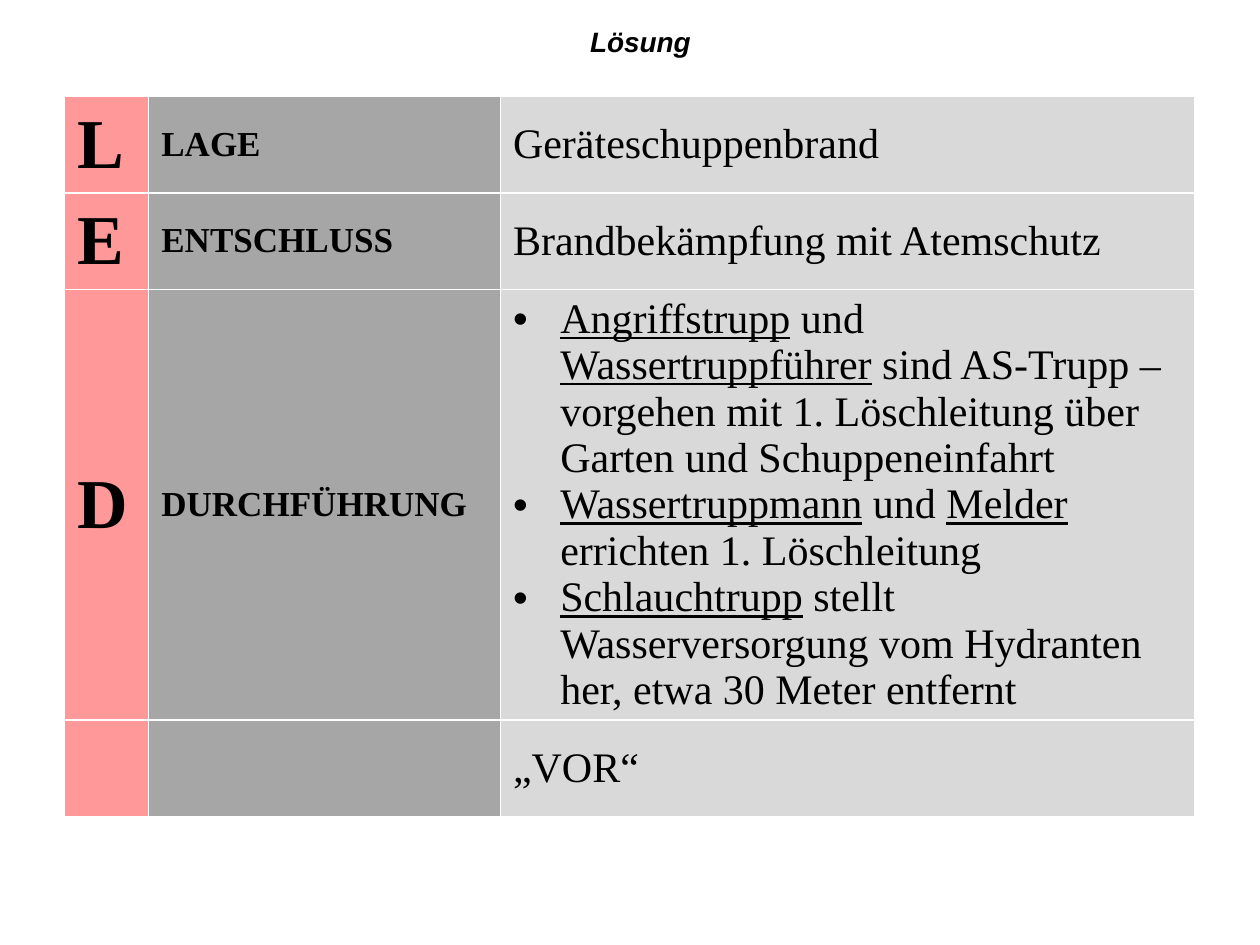
from typing import NamedTuple

from lxml.etree import SubElement
from pptx import Presentation
from pptx.dml.color import RGBColor
from pptx.enum.text import MSO_ANCHOR as Anchor, MSO_AUTO_SIZE as Fit, PP_ALIGN as Align
from pptx.oxml.ns import qn
from pptx.util import Pt

BLACK = RGBColor(0, 0, 0)
WHITE = RGBColor(255, 255, 255)
PINK = RGBColor(0xFF, 0x99, 0x99)
GRAY = RGBColor(0xA6, 0xA6, 0xA6)
PALE = RGBColor(0xD9, 0xD9, 0xD9)
INDENT = Pt(27)


class Span(NamedTuple):
    text: str
    under: bool = False


class Look(NamedTuple):
    width: float
    fill: RGBColor
    size: int
    bold: bool


class Row(NamedTuple):
    height: float
    letter: str
    term: str
    paras: list[list[Span]]
    bullets: bool = False


LOOKS = [
    Look(48, PINK, 40, True),
    Look(201, GRAY, 20, True),
    Look(397, PALE, 24, False),
]

TASKS = [
    [Span("Angriffstrupp", True), Span(" und "), Span("Wassertruppführer", True),
     Span(" sind AS-Trupp – vorgehen mit 1. Löschleitung über Garten und Schuppeneinfahrt")],
    [Span("Wassertruppmann", True), Span(" und "), Span("Melder", True),
     Span(" errichten 1. Löschleitung")],
    [Span("Schlauchtrupp", True),
     Span(" stellt Wasserversorgung vom Hydranten her, etwa 30 Meter entfernt")],
]

ROWS = [
    Row(55.2, "L", "LAGE", [[Span("Geräteschuppenbrand")]]),
    Row(55.2, "E", "ENTSCHLUSS", [[Span("Brandbekämpfung mit Atemschutz")]]),
    Row(246, "D", "DURCHFÜHRUNG", TASKS, True),
    Row(55.2, "", "", [[Span("„VOR“")]]),
]


def set_font(font, name: str, size: int, bold: bool) -> None:
    font.name, font.size, font.bold = name, Pt(size), bold
    font.color.rgb = BLACK


def add_bullet(para) -> None:
    props = para._p.get_or_add_pPr()
    props.set("marL", str(INDENT))
    props.set("indent", str(-INDENT))
    SubElement(props, qn("a:buFont"), typeface="Arial")
    SubElement(props, qn("a:buChar"), char="•")


def add_edges(cell) -> None:
    props = cell._tc.get_or_add_tcPr()
    for side in ("L", "R", "T", "B"):
        line = SubElement(props, qn(f"a:ln{side}"), w=str(Pt(1)))
        fill = SubElement(line, qn("a:solidFill"))
        SubElement(fill, qn("a:srgbClr"), val=str(WHITE))


def fill_cell(cell, look: Look, paras: list[list[Span]], bullets: bool) -> None:
    add_edges(cell)
    cell.fill.solid()
    cell.fill.fore_color.rgb = look.fill
    cell.vertical_anchor = Anchor.MIDDLE
    frame = cell.text_frame
    for i, spans in enumerate(paras):
        para = frame.add_paragraph() if i else frame.paragraphs[0]
        if bullets:
            add_bullet(para)
        set_font(para.font, "Times New Roman", look.size, look.bold)
        for span in spans:
            if span.text:
                run = para.add_run()
                run.text = span.text
                if span.under:
                    run.font.underline = True


def add_title(slide) -> None:
    title = slide.shapes.title
    title.left, title.top, title.width, title.height = Pt(258), Pt(9.5), Pt(216), Pt(28.8)
    title.fill.solid()
    title.fill.fore_color.rgb = WHITE
    frame = title.text_frame
    frame.auto_size = Fit.NONE
    frame.vertical_anchor = Anchor.MIDDLE
    frame.text = "Lösung"
    para = frame.paragraphs[0]
    para.alignment = Align.CENTER
    set_font(para.font, "Arial", 16, True)
    para.font.italic = True


def add_grid(slide) -> None:
    wide = sum(look.width for look in LOOKS)
    high = sum(row.height for row in ROWS)
    grid = slide.shapes.add_table(
        len(ROWS), len(LOOKS), Pt(37), Pt(55), Pt(wide), Pt(high)).table
    grid.first_row = grid.horz_banding = False
    for col, look in zip(grid.columns, LOOKS):
        col.width = Pt(look.width)
    for r, row in enumerate(ROWS):
        grid.rows[r].height = Pt(row.height)
        parts = [[[Span(row.letter)]], [[Span(row.term)]], row.paras]
        for c, (look, paras) in enumerate(zip(LOOKS, parts)):
            last = c == len(LOOKS) - 1
            fill_cell(grid.cell(r, c), look, paras, row.bullets and last)


def main() -> None:
    deck = Presentation()
    deck.slide_width, deck.slide_height = Pt(720), Pt(540)
    # Layout 5 is title only
    slide = deck.slides.add_slide(deck.slide_layouts[5])
    add_title(slide)
    add_grid(slide)
    deck.save("out.pptx")


if __name__ == "__main__":
    main()
